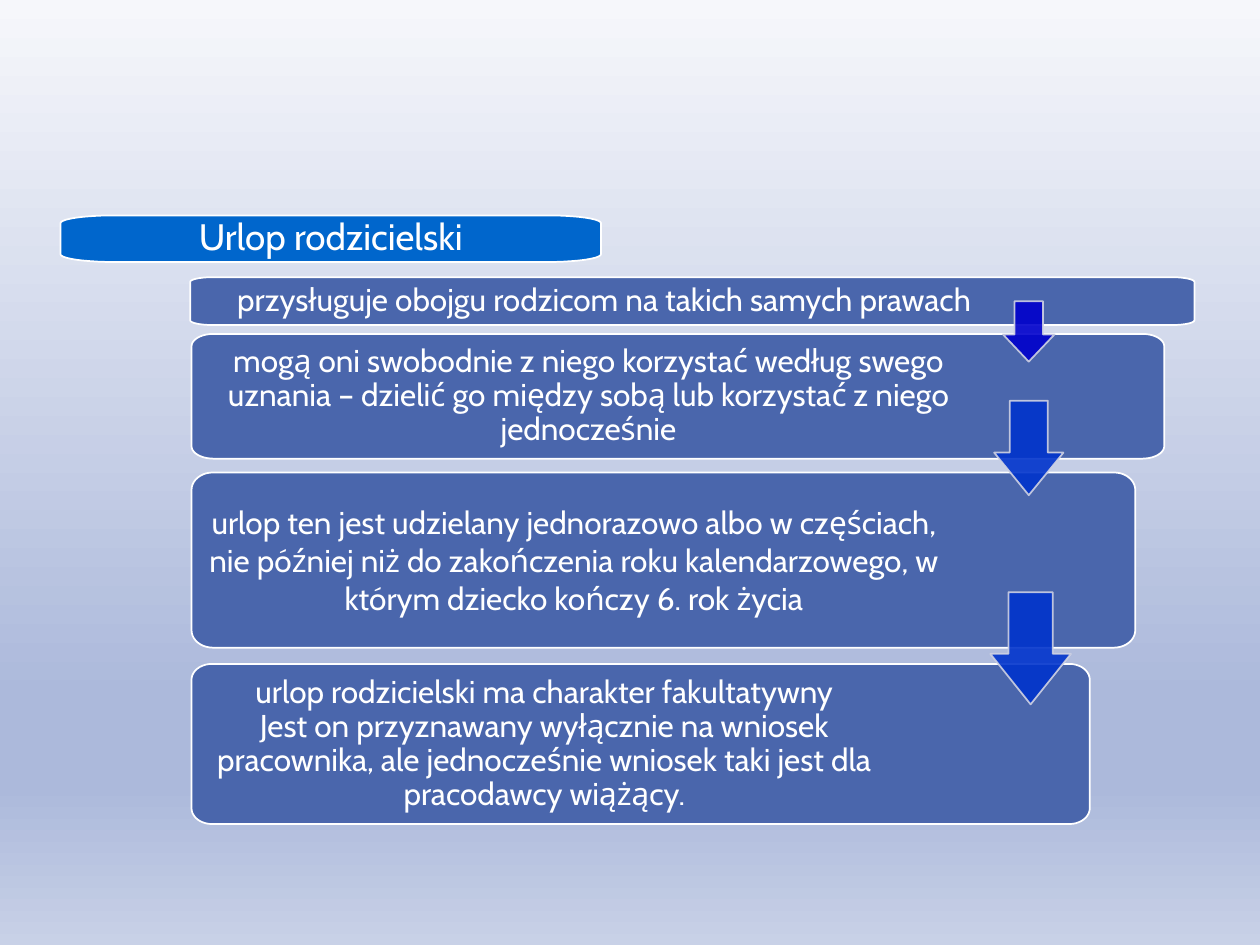
from dataclasses import dataclass
from math import cos, pi, sin

from lxml import etree
from pptx import Presentation
from pptx.dml.color import RGBColor
from pptx.enum.text import MSO_ANCHOR, PP_ALIGN
from pptx.oxml.ns import qn
from pptx.util import Inches, Pt

MIDDLE = MSO_ANCHOR.MIDDLE
CENTER = PP_ALIGN.CENTER


@dataclass(frozen=True)
class Theme:
    font: str = "Cabin"
    card: str = "4A66AC"
    title: str = "0066CC"
    first_arrow: str = "0000CC"
    arrow: str = "0033CC"
    arrow_line: str = "D0D3E3"
    white: str = "FFFFFF"
    background: tuple = ((0, "F6F7FB"), (74, "ACB9DB"), (83, "ACB9DB"), (100, "C8D1E7"))
    title_size: int = 21
    body_size: int = 18
    arrow_opacity: int = 90


class Deck:
    def __init__(self, slide, theme):
        self.s = slide
        self.theme = theme

    def background(self):
        fill = self.s.background.fill
        fill.gradient()
        fill.gradient_angle = 270
        stops = next(self.s.element.iter(qn("a:gsLst")))
        for stop in list(stops):
            stops.remove(stop)
        for pos, color in self.theme.background:
            stop = etree.SubElement(stops, qn("a:gs"), pos=str(pos * 1000))
            etree.SubElement(stop, qn("a:srgbClr"), val=color)

    def outline(self, points, fill, line):
        points = [(Inches(x), Inches(y)) for x, y in points]
        builder = self.s.shapes.build_freeform(*points[0])
        builder.add_line_segments(points[1:], close=True)
        sp = builder.convert_to_shape()
        sp.shadow.inherit = False
        sp.fill.solid()
        sp.fill.fore_color.rgb = RGBColor.from_string(fill)
        sp.line.color.rgb = RGBColor.from_string(line)
        sp.line.width = Pt(1)
        return sp

    def rounded(self, x, y, w, h, rx, ry, fill):
        corners = ((x + w - rx, y + ry, -90), (x + w - rx, y + h - ry, 0),
                   (x + rx, y + h - ry, 90), (x + rx, y + ry, 180))
        points = []
        for cx, cy, start in corners:
            for step in range(0, 91, 9):
                a = (start + step) * pi / 180
                points.append((cx + rx * cos(a), cy + ry * sin(a)))
        return self.outline(points, fill, self.theme.white)

    def text(self, sp, lines, size, insets, spacing):
        tf = sp.text_frame
        tf.word_wrap = True
        tf.vertical_anchor = MIDDLE
        tf.margin_left, tf.margin_top, tf.margin_right, tf.margin_bottom = map(Inches, insets)
        for i, (line, right) in enumerate(lines):
            p = tf.add_paragraph() if i else tf.paragraphs[0]
            p.alignment = CENTER
            p.line_spacing = spacing
            if right:
                p._p.get_or_add_pPr().set("marR", str(Inches(right)))
            r = p.add_run()
            r.text = line
            r.font.name = self.theme.font
            r.font.size = Pt(size)
            r.font.color.rgb = RGBColor.from_string(self.theme.white)

    def card(self, x, y, w, h, lines, right=1.53, spacing=0.9):
        sp = self.rounded(x, y, w, h, 0.0225 * w, 0.1 * h, self.theme.card)
        self.text(sp, lines, self.theme.body_size, (0.11, 0.11, right, 0.11), spacing)

    def title(self, x, y, w, h, line):
        sp = self.rounded(x, y, w, h, w / 10, h / 6, self.theme.title)
        self.text(sp, [(line, 0)], self.theme.title_size, (0.1, 0.08, 0.1, 0.08), 0.9)

    def arrow(self, x, y, w, h, fill):
        left, right, neck = x + 0.225 * w, x + 0.775 * w, y + 0.55 * h
        points = [(x, neck), (left, neck), (left, y), (right, y),
                  (right, neck), (x + w, neck), (x + w / 2, y + h)]
        sp = self.outline(points, fill, self.theme.arrow_line)
        for color in sp._element.spPr.iter(qn("a:srgbClr")):
            etree.SubElement(color, qn("a:alpha"), val=str(self.theme.arrow_opacity * 1000))


def main():
    prs = Presentation()
    prs.slide_width, prs.slide_height = Inches(10), Inches(7.5)
    theme = Theme()
    deck = Deck(prs.slides.add_slide(prs.slide_layouts[6]), theme)
    deck.background()

    deck.card(1.51, 2.2, 7.97, 0.38,
              [("przysługuje obojgu rodzicom na takich samych prawach", 0)], right=1.51)
    deck.card(1.52, 2.65, 7.72, 0.99,
              [("mogą oni swobodnie z niego korzystać według swego uznania – "
                "dzielić go między sobą lub korzystać z niego jednocześnie", 0)])
    deck.card(1.52, 3.75, 7.49, 1.39,
              [("urlop ten jest udzielany jednorazowo albo w częściach, nie później niż "
                "do zakończenia roku kalendarzowego, w którym dziecko kończy 6. rok życia", 0)],
              spacing=1.0)
    deck.arrow(7.96, 2.39, 0.41, 0.48, theme.first_arrow)
    deck.arrow(7.89, 3.18, 0.55, 0.75, theme.arrow)
    deck.card(1.52, 5.27, 7.13, 1.27,
              [("urlop rodzicielski ma charakter fakultatywny", 0.11),
               ("Jest on przyznawany wyłącznie na wniosek pracownika, ale jednocześnie "
                "wniosek taki jest dla pracodawcy wiążący.", 0)])
    deck.arrow(7.86, 4.7, 0.64, 0.89, theme.arrow)
    deck.title(0.48, 1.71, 4.29, 0.37, "Urlop rodzicielski")

    prs.save("out.pptx")


if __name__ == "__main__":
    main()
